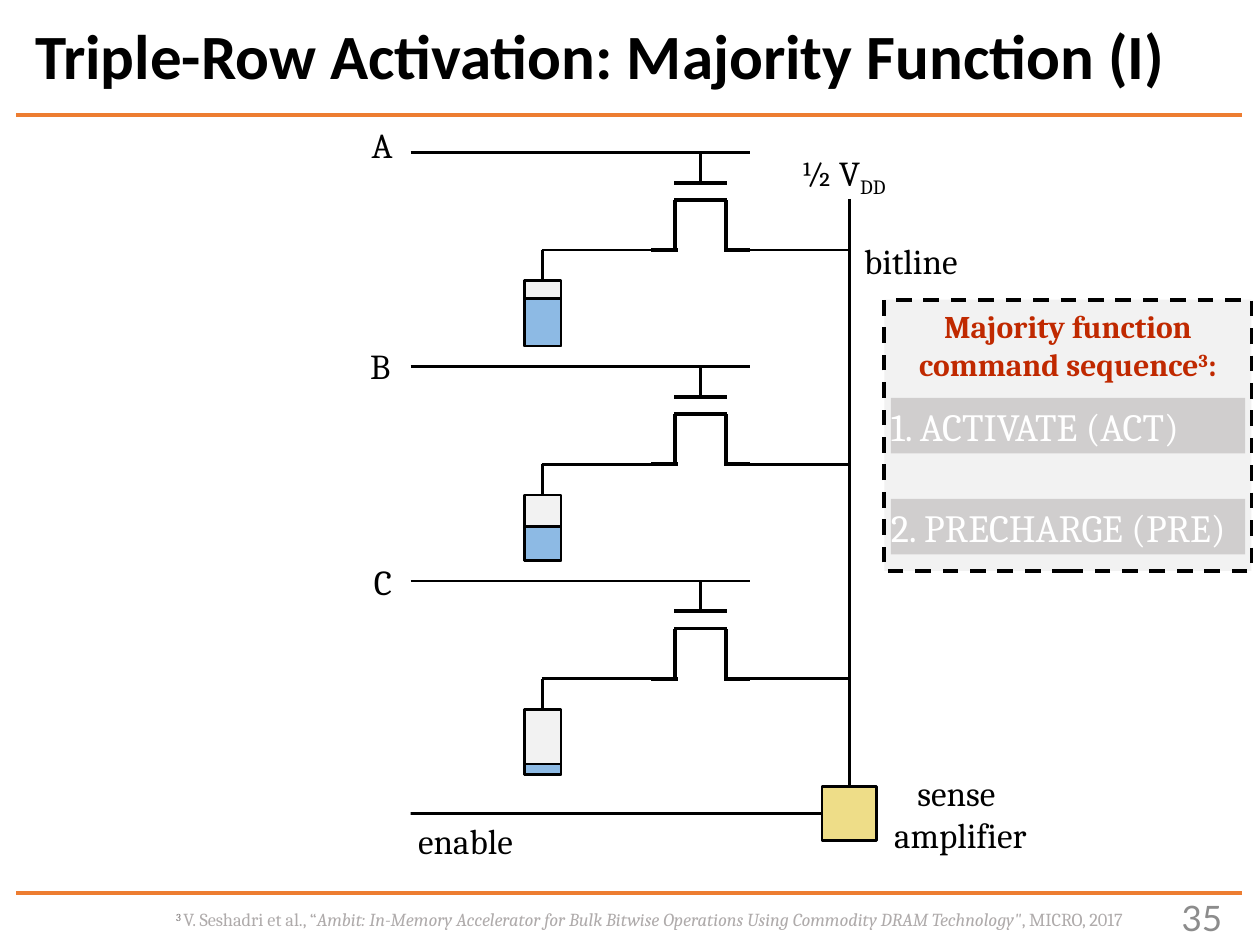
from lxml.etree import SubElement
from pptx import Presentation
from pptx.dml.color import RGBColor
from pptx.enum.dml import MSO_LINE
from pptx.enum.shapes import MSO_CONNECTOR, MSO_SHAPE
from pptx.enum.text import MSO_ANCHOR, PP_ALIGN
from pptx.oxml.ns import qn
from pptx.util import Cm, Pt

COLORS = {
    "ink": "000000", "rule": "ED7D31", "panel": "F2F2F2", "charge": "8DBAE4",
    "amplifier": "EEDD88", "command": "D0CECE", "white": "FFFFFF",
    "heading": "C02900", "number": "8C8C8C", "mark": "767171", "citation": "AFABAB",
}
THIN, THICK = 1.5, 2.25
CELL_PITCH = 4.32
BITLINE_X = 8.84    # from the left end of the wordlines
FOOT_Y = 1.97       # from a wordline down to its transistor's feet
# Row name, label offset from the wordline's left end, height of stored charge
ROWS = [("A", -1.04, -0.71, 0.96), ("B", -1.07, -0.56, 0.69), ("C", -0.99, -0.53, 0.22)]


def rgb(name):
    return RGBColor.from_string(COLORS[name])


def add_line(slide, x1, y1, x2, y2, weight=THIN, color="ink"):
    line = slide.shapes.add_connector(
        MSO_CONNECTOR.STRAIGHT, Cm(x1), Cm(y1), Cm(x2), Cm(y2))
    line.line.color.rgb = rgb(color)
    line.line.width = Pt(weight)
    SubElement(line._element.spPr, qn("a:effectLst"))
    return line


def add_rect(slide, x, y, width, height, fill, weight=THIN):
    rect = slide.shapes.add_shape(
        MSO_SHAPE.RECTANGLE, Cm(x), Cm(y), Cm(width), Cm(height))
    rect.shadow.inherit = False
    rect.fill.solid()
    rect.fill.fore_color.rgb = rgb(fill)
    if weight:
        rect.line.color.rgb = rgb("ink")
        rect.line.width = Pt(weight)
    else:
        rect.line.fill.background()
    return rect


def add_run(paragraph, text, size=20, color="ink", font="Cambria",
            bold=False, italic=False, baseline=0):
    run = paragraph.add_run()
    run.text = text
    run.font.name = font
    run.font.size = Pt(size)
    run.font.bold = bold
    run.font.italic = italic
    run.font.color.rgb = rgb(color)
    if baseline:
        run.font._element.set("baseline", str(baseline * 1000))


def add_text(slide, x, y, width, height, paragraphs, align=PP_ALIGN.LEFT,
             anchor=MSO_ANCHOR.TOP, wrap=True):
    """Each paragraph is a list of (text, run options) pairs."""
    box = slide.shapes.add_textbox(Cm(x), Cm(y), Cm(width), Cm(height))
    frame = box.text_frame
    frame.word_wrap = wrap
    frame.vertical_anchor = anchor
    for index, runs in enumerate(paragraphs):
        paragraph = frame.add_paragraph() if index else frame.paragraphs[0]
        paragraph.alignment = align
        for text, options in runs:
            add_run(paragraph, text, **options)
    return frame


def add_title(slide, x, y, width, height):
    title = [("Triple-Row Activation: Majority Function (I)",
              dict(size=36, font="Calibri", bold=True))]
    frame = add_text(slide, x, y, width, height, [title], anchor=MSO_ANCHOR.MIDDLE)
    frame.paragraphs[0].line_spacing = 0.9


def add_cell(slide, x, y, row, label_dx, label_dy, charge):
    """Draw one memory cell, with its wordline starting at x, y."""
    segments = [
        (0, 0, 6.83, 0, THIN),                          # wordline
        (5.84, 0.61, 5.84, 0, THIN),                    # gate lead
        (5.31, 0.61, 6.38, 0.61, THICK),                # gate
        (5.31, 0.96, 6.38, 0.96, THICK),                # channel
        (5.33, FOOT_Y, 5.33, 0.96, THICK),              # source leg
        (6.35, FOOT_Y, 6.35, 0.96, THICK),              # drain leg
        (4.85, FOOT_Y, 5.38, FOOT_Y, THICK),            # source foot
        (6.32, FOOT_Y, 6.83, FOOT_Y, THICK),            # drain foot
        (2.64, FOOT_Y, 5.11, FOOT_Y, THIN),             # wire to capacitor
        (6.38, FOOT_Y, BITLINE_X, FOOT_Y, THIN),        # wire to bitline
    ]
    for x1, y1, x2, y2, weight in segments:
        add_line(slide, x + x1, y + y1, x + x2, y + y2, weight)

    # Capacitor, filled from the bottom up to its charge
    cap_x, cap_y, cap_width, cap_height = x + 2.29, y + 2.59, 0.74, 1.32
    capacitor = add_rect(slide, cap_x, cap_y, cap_width, cap_height, "panel")
    center_x = cap_x + cap_width / 2
    lead = add_line(slide, center_x, y + FOOT_Y, center_x, cap_y)
    lead.end_connect(capacitor, 0)
    add_rect(slide, cap_x, cap_y + cap_height - charge, cap_width, charge, "charge")

    add_text(slide, x + label_dx, y + label_dy, 0.95, 1.12, [[(row, {})]], wrap=False)


def add_circuit(slide, x, y):
    """Draw the three rows and the bitline, with wordline A starting at x, y."""
    # Bitline and sense amplifier
    bitline_x, amp_y, amp_side = x + BITLINE_X, y + 12.78, 1.1
    amplifier = add_rect(slide, bitline_x - amp_side / 2, amp_y,
                         amp_side, amp_side, "amplifier")
    bitline = add_line(slide, bitline_x, y + 0.94, bitline_x, amp_y)
    bitline.end_connect(amplifier, 0)
    enable_y = amp_y + amp_side / 2
    enable = add_line(slide, x, enable_y, bitline_x - amp_side / 2, enable_y)
    enable.end_connect(amplifier, 1)

    # Signal labels
    add_text(slide, x + 7.62, y - 0.15, 2.46, 1.12,
             [[("½ V", {}), ("DD", dict(baseline=-25))]])
    add_text(slide, bitline_x + 0.05, y + 1.63, 2.46, 1.12, [[("bitline", {})]], wrap=False)
    add_text(slide, x + 8.36, y + 12.35, 5.44, 1.96,
             [[("sense ", {})], [("amplifier", {})]], PP_ALIGN.CENTER)
    add_text(slide, x - 0.1, enable_y, 2.54, 1.12, [[("enable", {})]], wrap=False)

    # Memory cells
    for index, row in enumerate(ROWS):
        add_cell(slide, x, y + index * CELL_PITCH, *row)


def add_command_panel(slide, x, y, width, height):
    panel = add_rect(slide, x, y, width, height, "panel", THICK)
    panel.line.dash_style = MSO_LINE.DASH

    # Command bars
    for index, command in enumerate(["1. ACTIVATE (ACT)", "2. PRECHARGE (PRE)"]):
        bar = add_rect(slide, x + 0.13, y + 1.98 + index * 2.04,
                       width - 0.26, 1.12, "command", weight=0)
        frame = bar.text_frame
        frame.margin_left = frame.margin_right = frame.margin_top = frame.margin_bottom = 0
        frame.word_wrap = True
        frame.vertical_anchor = MSO_ANCHOR.MIDDLE
        frame.paragraphs[0].alignment = PP_ALIGN.LEFT
        add_run(frame.paragraphs[0], command, size=22, color="white")

    # Heading
    style = dict(size=18, color="heading", bold=True)
    add_text(slide, x, y + 0.03, width, 1.8, [
        [("Majority function", style)],
        [("command sequence", style), ("3", dict(style, baseline=30)), (":", style)],
    ], PP_ALIGN.CENTER)


def add_footer(slide, x, y):
    style = dict(size=10.5, color="citation")
    add_text(slide, x + 2.97, y + 0.18, 20.68, 0.74, [[
        ("3 ", dict(size=10.5, color="mark", baseline=30)),
        ("V. Seshadri et al., “", style),
        ("Ambit: In-Memory Accelerator for Bulk Bitwise Operations Using "
         "Commodity DRAM Technology\"", dict(style, italic=True)),
        (", MICRO, 2017", style),
    ]])
    add_text(slide, x + 21.82, y - 0.03, 2.74, 1.02,
             [[("35", dict(size=20, color="number", font="Lato"))]],
             PP_ALIGN.RIGHT, MSO_ANCHOR.MIDDLE)


def main():
    deck = Presentation()
    deck.slide_width, deck.slide_height = Cm(25.4), Cm(19.05)
    slide = deck.slides.add_slide(deck.slide_layouts[6])
    for rule_y in (2.31, 18.01):
        add_line(slide, 0.33, rule_y, 25.04, rule_y, THICK, "rule")
    add_title(slide, 0.46, 0.36, 24.71, 1.68)
    add_circuit(slide, 8.28, 3.07)
    add_command_panel(slide, 17.83, 6.04, 7.4, 5.47)
    add_footer(slide, 0.33, 18.01)
    deck.save("out.pptx")


if __name__ == "__main__":
    main()
